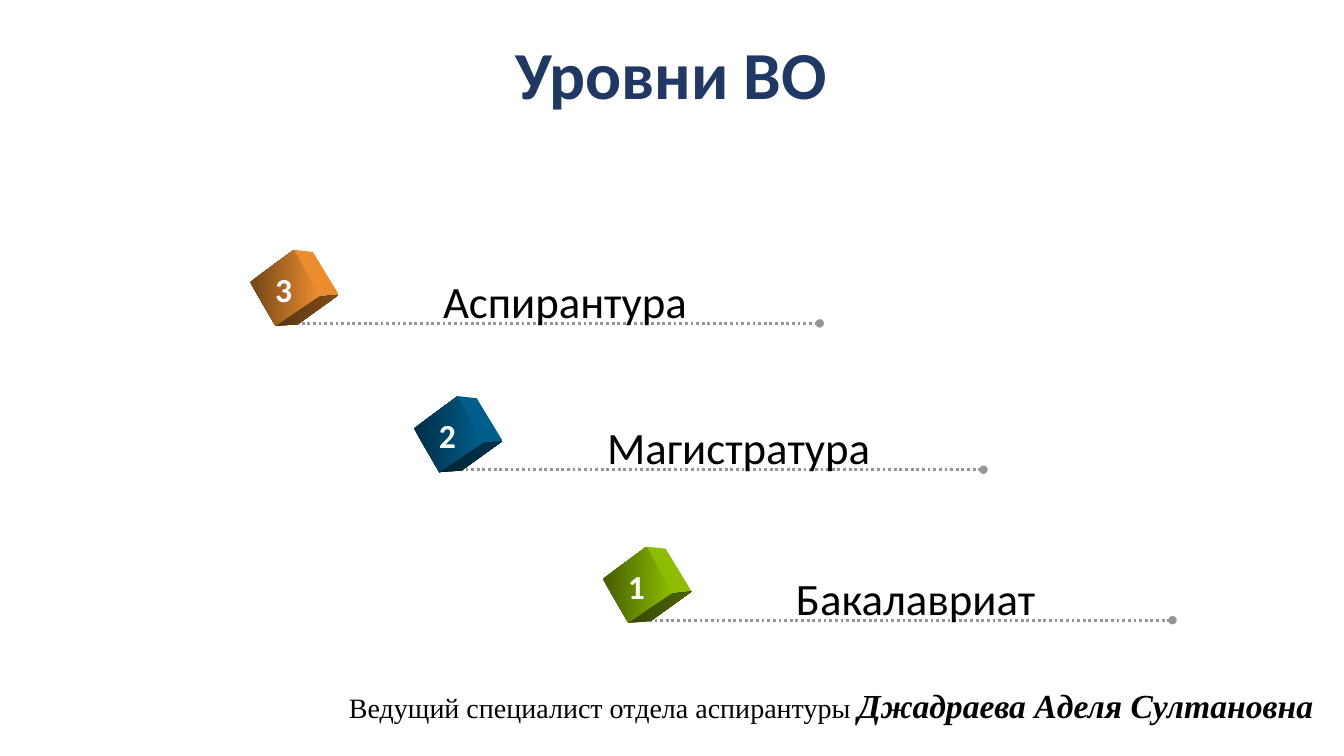
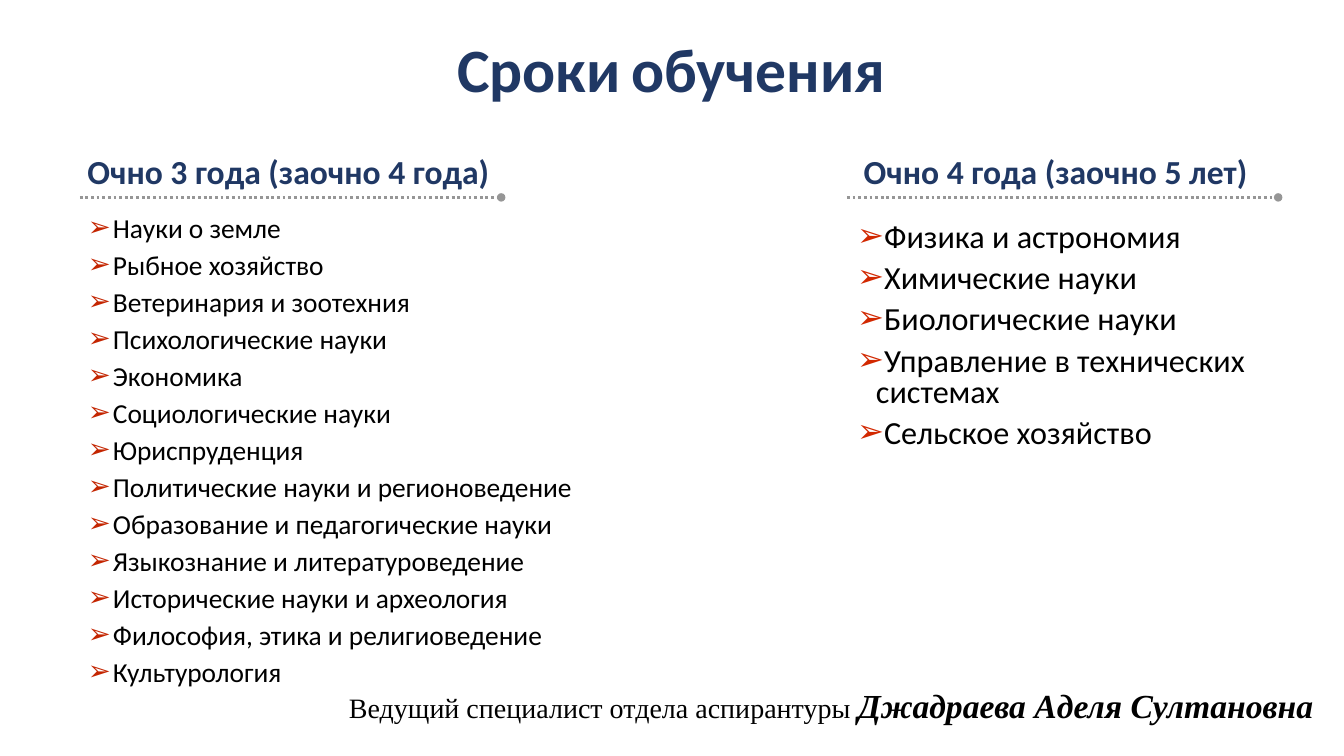
from lxml import etree
from pptx import Presentation
from pptx.dml.color import RGBColor
from pptx.enum import dml, shapes, text
from pptx.oxml import ns
from pptx.util import Pt

NAVY, BLACK, WHITE, GREY = "203864", "000000", "FFFFFF", "969696"
SANS, SERIF = "Calibri", "Times New Roman"
LEFT, CENTER, RIGHT = text.PP_ALIGN.LEFT, text.PP_ALIGN.CENTER, text.PP_ALIGN.RIGHT

LEVELS = [
    ("1", "Бакалавриат", "99CC00", 459.5, 443),
    ("2", "Магистратура", "006699", 324.5, 335.5),
    ("3", "Аспирантура", "FF9933", 207.5, 231),
]
THREE_YEARS = [
    "Науки о земле", "Рыбное хозяйство", "Ветеринария и зоотехния",
    "Психологические науки", "Экономика", "Социологические науки",
    "Юриспруденция", "Политические науки и регионоведение",
    "Образование и педагогические науки", "Языкознание и литературоведение",
    "Исторические науки и археология", "Философия, этика и религиоведение",
    "Культурология",
]
FOUR_YEARS = [
    "Физика и астрономия", "Химические науки", "Биологические науки",
    "Управление в технических системах", "Сельское хозяйство",
]


def color(value):
    """Turn a hex string into a colour."""
    return RGBColor.from_string(value)


def shade(value, part):
    """Darken a hex colour to the given part of its brightness."""
    return "".join(f"{round(int(value[i:i + 2], 16) * part):02X}" for i in (0, 2, 4))


def add_xml(parent, tag, **attrs):
    """Append a drawing element to a parent."""
    return etree.SubElement(parent, ns.qn(tag), attrs)


def place(sp, x, y, w, h):
    """Move and size a shape in points."""
    sp.left, sp.top, sp.width, sp.height = Pt(x), Pt(y), Pt(w), Pt(h)


def style(p, size, hexa=BLACK, bold=False, align=LEFT, name=SANS):
    """Format a whole paragraph."""
    p.alignment = align
    p.font.name, p.font.size, p.font.bold = name, Pt(size), bold
    p.font.color.rgb = color(hexa)


def add_runs(p, runs):
    """Add runs given as text and size pairs."""
    for words, size in runs:
        r = p.add_run()
        r.text, r.font.size = words, Pt(size)


def add_label(s, x, y, w, h, words, size, **look):
    """Add a one-paragraph text box."""
    tf = s.shapes.add_textbox(Pt(x), Pt(y), Pt(w), Pt(h)).text_frame
    tf.word_wrap = True
    p = tf.paragraphs[0]
    p.text = words
    style(p, size, **look)
    return p


def add_title(s, y, h, runs):
    """Fill the title placeholder."""
    sp = s.shapes.title
    place(sp, 169, y, 621, h)
    tf = sp.text_frame
    tf.auto_size, tf.vertical_anchor = text.MSO_AUTO_SIZE.NONE, text.MSO_ANCHOR.MIDDLE
    p = tf.paragraphs[0]
    add_runs(p, runs)
    p.line_spacing = 0.9
    style(p, runs[0][1], NAVY, True, CENTER)


def add_footer(s):
    """Add the speaker line at the bottom."""
    p = add_label(s, 88, 486, 857, 36, "", 20, align=RIGHT, name=SERIF)
    add_runs(p, [("Ведущий специалист отдела аспирантуры ", 20),
                 ("Джадраева Аделя Султановна", 24)])
    p.runs[1].font.bold = p.runs[1].font.italic = True


def add_dotted_line(s, x, y, w):
    """Draw a dotted rule that ends in a dot."""
    c = s.shapes.add_connector(shapes.MSO_CONNECTOR.STRAIGHT, Pt(x), Pt(y), Pt(x + w), Pt(y))
    c.line.color.rgb, c.line.width = color(GREY), Pt(2)
    c.line.dash_style = dml.MSO_LINE.ROUND_DOT
    pr = c.element.spPr
    add_xml(pr.find(ns.qn("a:ln")), "a:tailEnd", type="oval")
    add_xml(pr, "a:effectLst")


def add_face(s, x, y, corners, start, end):
    """Draw one gradient face of a cube."""
    points = [(Pt(x + dx), Pt(y + dy)) for dx, dy in corners]
    fb = s.shapes.build_freeform(*points[0])
    fb.add_line_segments(points[1:])
    sp = fb.convert_to_shape()
    sp.shadow.inherit = False
    sp.line.fill.background()
    sp.fill.gradient()
    sp.fill.gradient_angle = 0
    for stop, hexa in zip(sp.fill.gradient_stops, (start, end)):
        stop.color.rgb = color(hexa)


def add_cube(s, x, y, hexa):
    """Draw a tilted cube from its three visible faces."""
    left, top, inner, bottom = (0, 23), (31.5, 0), (50, 33.5), (18.5, 54.5)
    back, right, low = (45, 1.5), (63.5, 32), (34.5, 53)
    bright, dark = shade(hexa, 0.92), shade(hexa, 0.45)
    add_face(s, x, y, (left, top, inner, bottom), dark, bright)
    add_face(s, x, y, (top, back, right, inner), bright, bright)
    add_face(s, x, y, (bottom, inner, right, low), shade(hexa, 0.35), shade(hexa, 0.5))


def add_level(s, x, y, number, name, hexa):
    """Place one education level around the start of its rule."""
    add_dotted_line(s, x, y, 378)
    add_cube(s, x - 29, y - 52.5, hexa)
    add_label(s, x + 102, y - 39, 220, 46, name, 32)
    add_label(s, x - 18, y - 42.5, 30, 36, number, 24, hexa=WHITE, bold=True)


def add_bullet(p, indent, hexa):
    """Give a paragraph an arrow bullet with a hanging indent."""
    pr = p._p.get_or_add_pPr()
    pr.set("marL", str(Pt(indent)))
    pr.set("indent", str(-Pt(indent)))
    add_xml(add_xml(pr, "a:buClr"), "a:srgbClr", val=hexa)
    add_xml(pr, "a:buChar", char="➢")


def fill_list(sp, items, size, spacing, gap, indent, bullet):
    """Fill a body placeholder with a bulleted list."""
    tf = sp.text_frame
    tf.auto_size, tf.vertical_anchor = text.MSO_AUTO_SIZE.NONE, text.MSO_ANCHOR.TOP
    for i, item in enumerate(items):
        p = tf.paragraphs[0] if i == 0 else tf.add_paragraph()
        p.text = item
        add_bullet(p, indent, bullet)
        p.line_spacing, p.space_before = spacing, Pt(gap if i else 0)
        style(p, size)


def add_column(s, x, y, w, heading):
    """Place a column heading over its rule."""
    add_dotted_line(s, x, y, w)
    add_label(s, x - 6, y - 37, 310, 36, heading, 24, hexa=NAVY, bold=True, align=CENTER)


def levels_slide(prs):
    """Build the slide of education levels."""
    s = prs.slides.add_slide(prs.slide_layouts[5])
    add_title(s, 24, 63, [("Уровни ВО", 48)])
    for number, name, hexa, x, y in LEVELS:
        add_level(s, x, y, number, name, hexa)
    add_footer(s)


def terms_slide(prs):
    """Build the slide of study terms."""
    s = prs.slides.add_slide(prs.slide_layouts[3])
    add_title(s, 14, 76, [("Сроки", 44), (" ", 32), ("обучения", 44)])
    left, right = s.placeholders[1], s.placeholders[2]
    place(left, 55.5, 153.5, 434, 347)
    fill_list(left, THREE_YEARS, 19.6, 0.7, 10, 18, "C42500")
    place(right, 605, 156, 292, 175)
    fill_list(right, FOUR_YEARS, 23, 0.8, 7.5, 13.5, "D22800")
    add_column(s, 57, 141, 301, "Очно 3 года (заочно 4 года)")
    add_column(s, 605, 141, 308, "Очно 4 года (заочно 5 лет)")
    add_footer(s)


def main():
    """Build and save the presentation."""
    prs = Presentation()
    prs.slide_width, prs.slide_height = Pt(960), Pt(540)
    levels_slide(prs)
    terms_slide(prs)
    prs.save("out.pptx")


if __name__ == "__main__":
    main()
